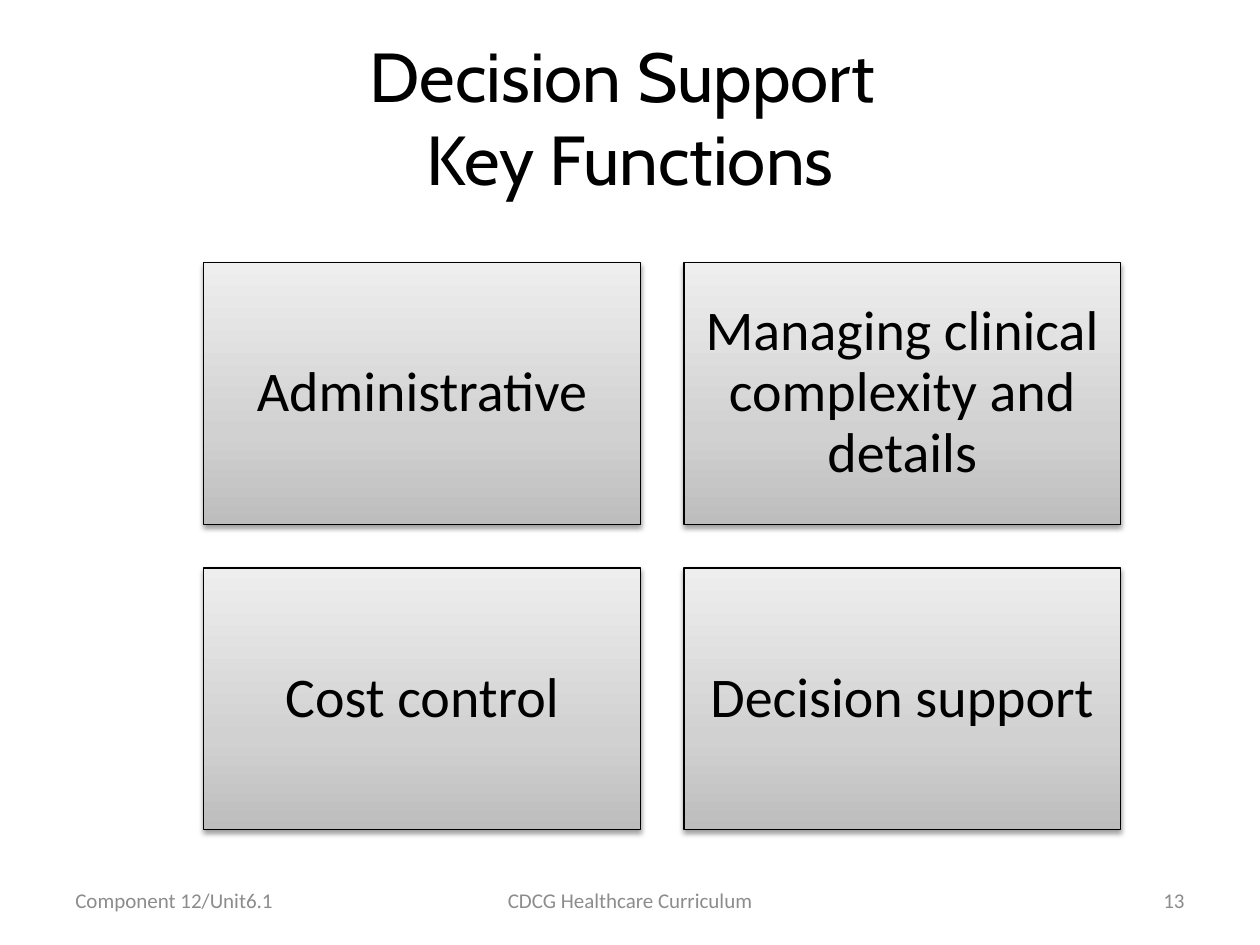
from copy import deepcopy

from lxml import etree
from pptx import Presentation
from pptx.dml.color import RGBColor
from pptx.enum.shapes import MSO_SHAPE as Shape
from pptx.enum.text import MSO_ANCHOR as Anchor, MSO_AUTO_SIZE as AutoSize, PP_ALIGN as Align
from pptx.oxml.ns import qn
from pptx.util import Cm, Pt

COLORS = {"ink": "000000", "muted": "8C8C8C", "dark": "BDBDBD", "mid": "D1D1D1", "light": "EEEEEE"}
TITLE = "Decision Support \vKey Functions"
FUNCTIONS = [
    "Administrative",
    "Managing clinical complexity and details",
    "Cost control",
    "Decision support",
]
FOOTERS = [
    ("Component 12/Unit6.1", 1.27, 5.92, Align.LEFT),
    ("CDCG Healthcare Curriculum", 8.68, 8.05, Align.CENTER),
    ("13", 18.21, 5.92, Align.RIGHT),
]
GRADIENT = [(0, "dark"), (0.35, "mid"), (1, "light")]
COLUMNS = 2
GRID_LEFT, GRID_TOP = 4.11, 5.29
CARD_WIDTH, CARD_HEIGHT, GAP = 8.8, 5.28, 0.88


def rgb(name):
    return RGBColor.from_string(COLORS[name])


def write(frame, text, font, size, color, align):
    frame.text = text
    frame.word_wrap = True
    frame.auto_size = AutoSize.NONE
    frame.vertical_anchor = Anchor.MIDDLE
    paragraph = frame.paragraphs[0]
    paragraph.alignment = align
    for run in paragraph.runs:
        run.font.name = font
        run.font.size = Pt(size)
        run.font.color.rgb = rgb(color)
    return paragraph


def shade(card):
    card.fill.gradient()
    card.fill.gradient_angle = 90
    stops = card._element.spPr.find(".//" + qn("a:gsLst"))
    stops.append(deepcopy(stops[0]))
    for stop, (position, color) in zip(card.fill.gradient_stops, GRADIENT):
        stop.position = position
        stop.color.rgb = rgb(color)


def cast_shadow(card):
    card.shadow.inherit = False
    effects = card._element.spPr.find(qn("a:effectLst"))
    shadow = etree.SubElement(
        effects, qn("a:outerShdw"), blurRad=str(Pt(3.1)), dist=str(Pt(1.6)), dir="5400000", rotWithShape="0"
    )
    color = etree.SubElement(shadow, qn("a:srgbClr"), val=COLORS["ink"])
    etree.SubElement(color, qn("a:alpha"), val="38000")


def add_card(slide, index, label):
    row, column = divmod(index, COLUMNS)
    left = GRID_LEFT + column * (CARD_WIDTH + GAP)
    top = GRID_TOP + row * (CARD_HEIGHT + GAP)
    card = slide.shapes.add_shape(Shape.RECTANGLE, Cm(left), Cm(top), Cm(CARD_WIDTH), Cm(CARD_HEIGHT))
    shade(card)
    card.line.color.rgb = rgb("ink")
    card.line.width = Pt(0.75)
    cast_shadow(card)
    frame = card.text_frame
    frame.margin_left = frame.margin_right = frame.margin_top = frame.margin_bottom = Cm(0.34)
    write(frame, label, "Calibri", 32, "ink", Align.CENTER).line_spacing = 0.9


def main():
    deck = Presentation()
    deck.slide_width, deck.slide_height = Cm(25.4), Cm(19.05)
    slide = deck.slides.add_slide(deck.slide_layouts[5])

    title = slide.shapes.title
    title.left, title.top, title.width, title.height = Cm(1.27), Cm(0.76), Cm(22.86), Cm(3.18)
    write(title.text_frame, TITLE, "Cabin", 39.6, "ink", Align.CENTER)

    for index, label in enumerate(FUNCTIONS):
        add_card(slide, index, label)

    for text, left, width, align in FOOTERS:
        footer = slide.shapes.add_textbox(Cm(left), Cm(17.65), Cm(width), Cm(1.01))
        write(footer.text_frame, text, "Calibri", 12, "muted", align)

    deck.save("out.pptx")


if __name__ == "__main__":
    main()
